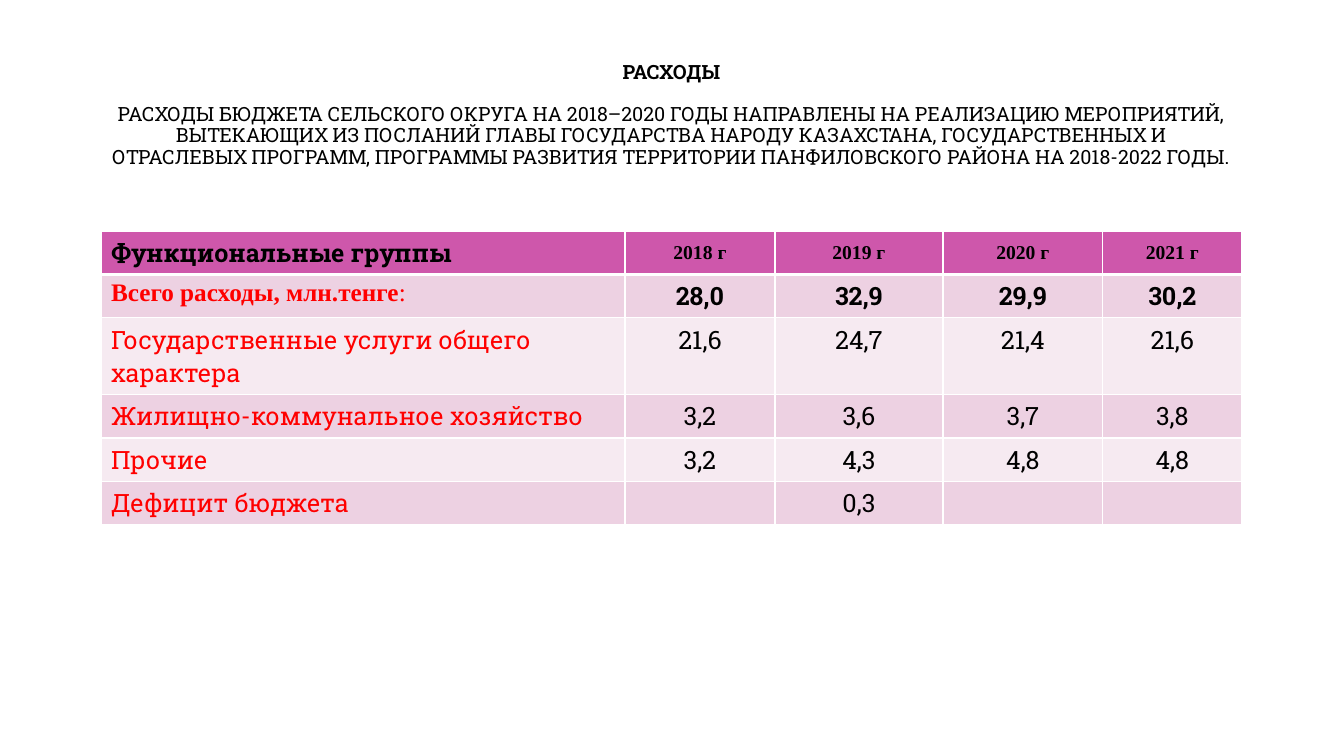
import pptx
import pptx.util
import pptx.dml.color
import pptx.enum.text
import pptx.oxml
import pptx.oxml.ns

COLORS = {
    "text": "000000",
    "label": "FF0000",
    "header": "CE57AB",
    "odd": "EDD1E2",
    "even": "F6EAF1",
    "border": "FFFFFF",
}
SLAB = "Roboto Slab"
TIMES = "Times New Roman"
CENTER = pptx.enum.text.PP_ALIGN.CENTER
LEFT = pptx.enum.text.PP_ALIGN.LEFT
MIDDLE = pptx.enum.text.MSO_ANCHOR.MIDDLE

HEADING = "РАСХОДЫ"
SUMMARY = (
    "РАСХОДЫ БЮДЖЕТА СЕЛЬСКОГО ОКРУГА НА 2018–2020 ГОДЫ НАПРАВЛЕНЫ НА РЕАЛИЗАЦИЮ "
    "МЕРОПРИЯТИЙ, ВЫТЕКАЮЩИХ ИЗ ПОСЛАНИЙ ГЛАВЫ ГОСУДАРСТВА НАРОДУ КАЗАХСТАНА, "
    "ГОСУДАРСТВЕННЫХ И ОТРАСЛЕВЫХ ПРОГРАММ, ПРОГРАММЫ РАЗВИТИЯ ТЕРРИТОРИИ "
    "ПАНФИЛОВСКОГО РАЙОНА НА 2018-2022 ГОДЫ."
)
COLUMNS = [524, 150, 168, 160, 139]
ROW_HEIGHT = 41
EXPENSES = [
    ["Функциональные группы", "2018 г", "2019 г", "2020 г", "2021 г"],
    ["Всего расходы, млн.тенге", "28,0", "32,9", "29,9", "30,2"],
    ["Государственные услуги общего характера", "21,6", "24,7", "21,4", "21,6"],
    ["Жилищно-коммунальное хозяйство", "3,2", "3,6", "3,7", "3,8"],
    ["Прочие", "3,2", "4,3", "4,8", "4,8"],
    ["Дефицит бюджета", "", "0,3", "", ""],
]


def px(length):
    return pptx.util.Emu(round(length * 914400 / 100.8))


def rgb(name):
    return pptx.dml.color.RGBColor.from_string(COLORS[name])


class SlideBuilder:
    def __init__(self, page):
        self.page = page

    def style(self, para, size, font=SLAB, color="text", bold=False, align=CENTER):
        para.alignment = align
        para.font.size = pptx.util.Pt(size)
        para.font.name = font
        para.font.bold = bold
        para.font.color.rgb = rgb(color)

    def title(self, left, top, width, height, heading, summary):
        box = self.page.shapes.title
        box.left, box.top, box.width, box.height = map(px, (left, top, width, height))
        frame = box.text_frame
        frame.word_wrap = True
        frame.auto_size = pptx.enum.text.MSO_AUTO_SIZE.NONE
        frame.vertical_anchor = MIDDLE
        frame.margin_bottom = px(26)
        frame.text = heading
        frame.add_paragraph().text = summary
        for para, bold in zip(frame.paragraphs, (True, False)):
            self.style(para, 14, bold=bold)
            para.line_spacing = 0.9
        frame.paragraphs[0].space_after = pptx.util.Pt(15)

    def borders(self, cell, widths):
        properties = cell._tc.get_or_add_tcPr()
        for index, (side, width) in enumerate(widths.items()):
            line = pptx.oxml.parse_xml(
                f'<a:{side} {pptx.oxml.ns.nsdecls("a")} w="{pptx.util.Pt(width)}">'
                f'<a:solidFill><a:srgbClr val="{COLORS["border"]}"/></a:solidFill>'
                f'</a:{side}>'
            )
            properties.insert(index, line)

    def cell(self, cell, text, row, column):
        header, label = row == 0, column == 0
        cell.fill.solid()
        cell.fill.fore_color.rgb = rgb("header" if header else "odd" if row % 2 else "even")
        self.borders(cell, {
            "lnL": 1, "lnR": 1, "lnT": 3 if row == 1 else 1, "lnB": 3 if header else 1,
        })
        para = cell.text_frame.paragraphs[0]
        if text:
            para.add_run().text = text
        year = header and not label
        total = row == 1 and label
        self.style(
            para,
            14 if year else 18,
            TIMES if year or total else SLAB,
            "label" if label and not header else "text",
            row < 2,
            LEFT if label else CENTER,
        )
        if year:
            cell.vertical_anchor = MIDDLE
            cell.margin_left = cell.margin_right = px(7)
            cell.margin_top = cell.margin_bottom = 0
        if total:
            span = para.add_run()
            span.text = ":"
            span.font.bold = False

    def table(self, left, top, columns, row_height, rows):
        grid = self.page.shapes.add_table(
            len(rows), len(columns), px(left), px(top),
            px(sum(columns)), px(row_height * len(rows)),
        ).table
        grid.first_row = grid.horz_banding = False
        for column, width in zip(grid.columns, columns):
            column.width = px(width)
        for row, texts in enumerate(rows):
            grid.rows[row].height = px(row_height)
            for column, text in enumerate(texts):
                self.cell(grid.cell(row, column), text, row, column)


def main():
    deck = pptx.Presentation()
    deck.slide_width, deck.slide_height = px(1344), px(756)
    builder = SlideBuilder(deck.slides.add_slide(deck.slide_layouts[5]))

    # Heading and summary
    builder.title(101, 39, 1141, 174, HEADING, SUMMARY)

    # Budget expenses by year
    builder.table(101, 231, COLUMNS, ROW_HEIGHT, EXPENSES)

    deck.save("out.pptx")


if __name__ == "__main__":
    main()
